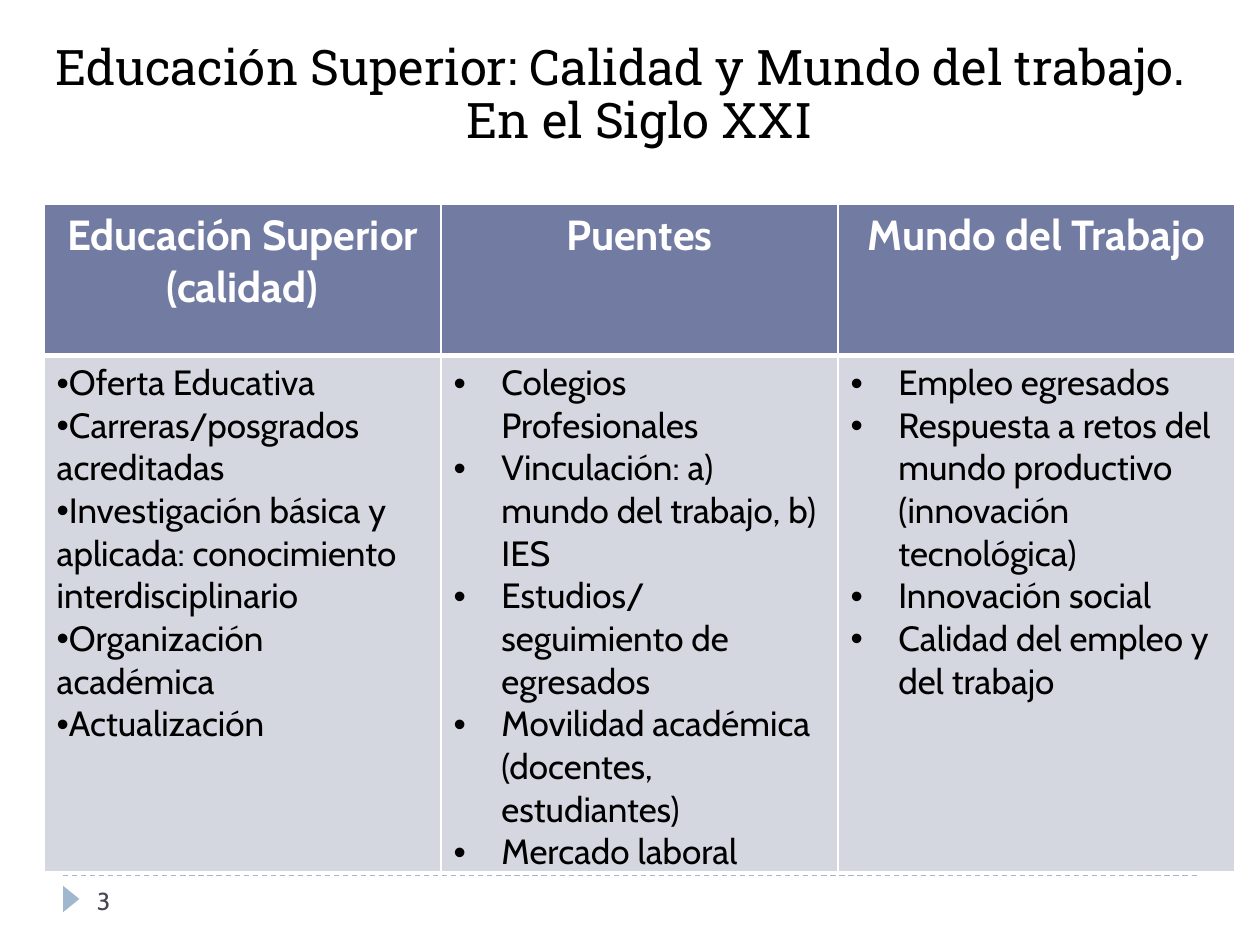
from lxml import etree
from pptx import Presentation
from pptx.dml.color import RGBColor
from pptx.enum.dml import MSO_LINE
from pptx.enum.shapes import MSO_CONNECTOR, MSO_SHAPE
from pptx.enum.text import MSO_ANCHOR, PP_ALIGN
from pptx.oxml.ns import qn
from pptx.util import Inches, Pt

CENTER = PP_ALIGN.CENTER
MIDDLE, TOP = MSO_ANCHOR.MIDDLE, MSO_ANCHOR.TOP
DASH = MSO_LINE.DASH
STRAIGHT = MSO_CONNECTOR.STRAIGHT
TRIANGLE = MSO_SHAPE.ISOSCELES_TRIANGLE

BODY, SERIF = "Cabin", "Roboto Slab"
WHITE, BLACK, SLATE = "FFFFFF", "000000", "464653"
HEAD, PALE, ACCENT = "727CA3", "D5D7E0", "9FB8CD"

TITLE = "Educación Superior: Calidad y Mundo del trabajo. En el Siglo XXI"
# heading, bullet indent in inches, items
COLUMNS = [
    ("Educación Superior (calidad)", 0, [
        "Oferta Educativa",
        "Carreras/posgrados acreditadas",
        "Investigación básica y aplicada: conocimiento interdisciplinario",
        "Organización académica",
        "Actualización",
    ]),
    ("Puentes", 0.38, [
        "Colegios Profesionales",
        "Vinculación: a) mundo del trabajo, b) IES",
        "Estudios/seguimiento de egresados",
        "Movilidad académica (docentes, estudiantes)",
        "Mercado laboral",
    ]),
    ("Mundo del Trabajo", 0.38, [
        "Empleo egresados",
        "Respuesta a retos del mundo productivo (innovación tecnológica)",
        "Innovación social",
        "Calidad del empleo y del trabajo",
    ]),
]


def color(code):
    return RGBColor.from_string(code)


def style(para, font, size, code, bold=False):
    para.font.name = font
    para.font.size = Pt(size)
    para.font.bold = bold
    para.font.color.rgb = color(code)


def indent(para, depth):
    """Hang the first line back by the depth of the left margin."""
    props = para._p.get_or_add_pPr()
    props.set("marL", str(Inches(depth)))
    props.set("indent", str(-Inches(depth)))
    return props


def bullet(para, depth):
    props = indent(para, depth)
    etree.SubElement(props, qn("a:buFont"), typeface="Arial")
    etree.SubElement(props, qn("a:buChar"), char="•")


def paint(cell, code, bottom):
    """Fill a cell and give it white borders, the bottom one in its own width."""
    props = cell._tc.get_or_add_tcPr()
    for side, width in (("L", 1), ("R", 1), ("T", 1), ("B", bottom)):
        line = etree.SubElement(props, qn("a:ln" + side), w=str(Pt(width)))
        fill = etree.SubElement(line, qn("a:solidFill"))
        etree.SubElement(fill, qn("a:srgbClr"), val=WHITE)
    cell.fill.solid()
    cell.fill.fore_color.rgb = color(code)


def add_text(slide, box, text, anchor):
    frame = slide.shapes.add_textbox(*map(Inches, box)).text_frame
    frame.word_wrap = True
    frame.vertical_anchor = anchor
    para = frame.paragraphs[0]
    para.text = text
    return para


def add_title(slide, box):
    para = add_text(slide, box, TITLE, TOP)
    para.alignment = CENTER
    para.line_spacing = 0.9
    indent(para, 0.3)
    style(para, SERIF, 28, BLACK)


def add_grid(slide, box, heights):
    table = slide.shapes.add_table(
        len(heights), len(COLUMNS), *map(Inches, box)).table
    for row, height in zip(table.rows, heights):
        row.height = Inches(height)
    for col, (heading, depth, items) in enumerate(COLUMNS):
        table.columns[col].width = Inches(box[2] / len(COLUMNS))
        head, body = table.cell(0, col), table.cell(1, col)
        paint(head, HEAD, 3)
        paint(body, PALE, 1)
        head.text = heading
        para = head.text_frame.paragraphs[0]
        para.alignment = CENTER
        style(para, BODY, 24, WHITE, True)
        body.text = "\n".join(items)
        for para in body.text_frame.paragraphs:
            bullet(para, depth)
            style(para, BODY, 20, BLACK)


def add_footer(slide, box):
    left, top, width, height = box
    rule = slide.shapes.add_connector(
        STRAIGHT, Inches(left), Inches(top), Inches(left + width), Inches(top))
    rule.line.color.rgb = color(ACCENT)
    rule.line.width = Pt(0.75)
    rule.line.dash_style = DASH
    etree.SubElement(rule._element.spPr, qn("a:effectLst"))
    mark = slide.shapes.add_shape(
        TRIANGLE, Inches(left - 0.04), Inches(top + 0.12), Inches(0.21), Inches(0.13))
    mark.rotation = 90
    mark.shadow.inherit = False
    mark.fill.solid()
    mark.fill.fore_color.rgb = color(ACCENT)
    mark.line.fill.background()
    para = add_text(slide, (left + 0.17, top, 2.17, height), "3", MIDDLE)
    style(para, BODY, 14, SLATE)


def main():
    deck = Presentation()
    deck.slide_width, deck.slide_height = Inches(10), Inches(7.5)
    slide = deck.slides.add_slide(deck.slide_layouts[6])
    add_footer(slide, (0.5, 6.95, 9, 0.4))
    add_grid(slide, (0.35, 1.62, 9.45, 5.2), (1.2, 4))
    add_title(slide, (0.2, 0.29, 9.45, 1.18))
    deck.save("out.pptx")


if __name__ == "__main__":
    main()
